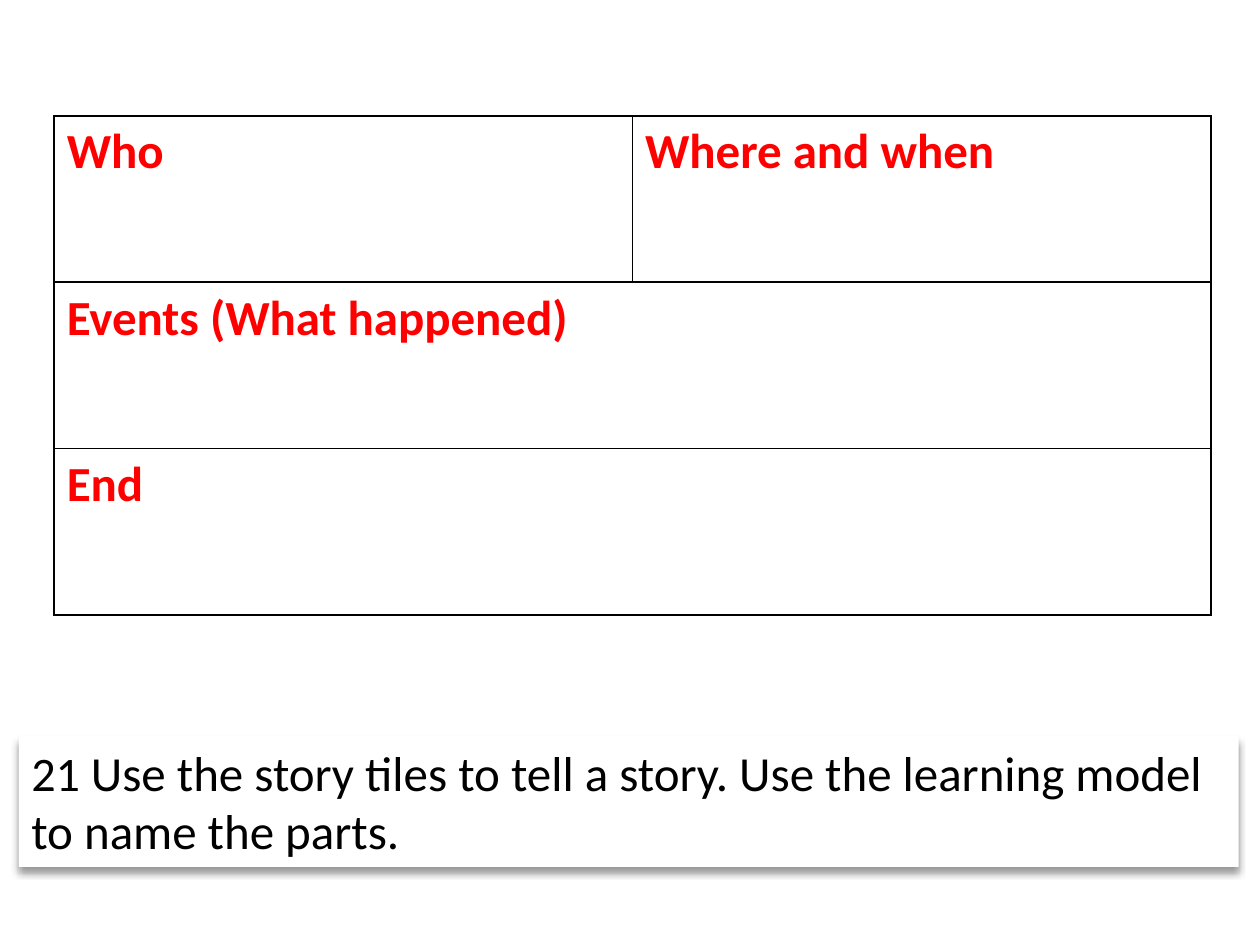
from dataclasses import dataclass
from lxml.etree import SubElement
from pptx import Presentation
from pptx.dml.color import RGBColor
from pptx.enum.shapes import MSO_SHAPE
from pptx.enum.text import MSO_ANCHOR, MSO_AUTO_SIZE, PP_ALIGN
from pptx.oxml import parse_xml
from pptx.oxml.ns import nsdecls, qn
from pptx.util import Inches, Pt


@dataclass(frozen=True)
class Theme:
    font: str = "Calibri"
    black: RGBColor = RGBColor(0, 0, 0)
    red: RGBColor = RGBColor(255, 0, 0)
    white: RGBColor = RGBColor(255, 255, 255)
    number: float = 27.5
    body: float = 28
    border: float = 1


theme = Theme()


def add_text(p, text, size=theme.body, color=theme.black, bold=False):
    p.alignment = PP_ALIGN.LEFT
    r = p.add_run()
    r.text = text
    r.font.name = theme.font
    r.font.size = Pt(size)
    r.font.bold = bold
    r.font.color.rgb = color


def add_borders(cell):
    tcPr = cell._tc.get_or_add_tcPr()
    for i, side in enumerate(("lnL", "lnR", "lnT", "lnB")):
        ln = parse_xml(f'<a:{side} {nsdecls("a")} w="{Pt(theme.border)}"/>')
        fill = SubElement(ln, qn("a:solidFill"))
        SubElement(fill, qn("a:srgbClr"), val=str(theme.black))
        tcPr.insert(i, ln)


prs = Presentation()
prs.slide_width, prs.slide_height = Inches(10), Inches(7.5)
s = prs.slides.add_slide(prs.slide_layouts[6])

sp = s.shapes.add_shape(
    MSO_SHAPE.RECTANGLE, Inches(0.15), Inches(5.84), Inches(9.68), Inches(1.04)
)
sp.fill.solid()
sp.fill.fore_color.rgb = theme.white
sp.line.fill.background()
sp.shadow.inherit = False
effects = sp._element.spPr.find(qn("a:effectLst"))
shadow = SubElement(
    effects, qn("a:outerShdw"), blurRad=str(Pt(4)), dist=str(Pt(3)),
    dir=str(90 * 60000), rotWithShape="0",
)
tint = SubElement(shadow, qn("a:srgbClr"), val=str(theme.black))
SubElement(tint, qn("a:alpha"), val="40000")
tf = sp.text_frame
tf.word_wrap = True
tf.auto_size = MSO_AUTO_SIZE.SHAPE_TO_FIT_TEXT
tf.vertical_anchor = MSO_ANCHOR.TOP
p = tf.paragraphs[0]
add_text(p, "21 ", size=theme.number)
add_text(p, "Use the story tiles to tell a story. Use the learning model to name the parts.")

rows = [("Who", "Where and when"), ("Events (What happened)",), ("End",)]
cols = 2
col_w, row_h = Inches(4.59), Inches(1.32)
table = s.shapes.add_table(
    len(rows), cols, Inches(0.43), Inches(0.92), cols * col_w, len(rows) * row_h
).table
table.first_row = table.horz_banding = False

for i, labels in enumerate(rows):
    for j in range(cols):
        cell = table.cell(i, j)
        cell.fill.solid()
        cell.fill.fore_color.rgb = theme.white
        add_borders(cell)
    for j, label in enumerate(labels):
        p = table.cell(i, j).text_frame.paragraphs[0]
        add_text(p, label, color=theme.red, bold=True)
    if len(labels) == 1:
        table.cell(i, 0).merge(table.cell(i, cols - 1))

prs.save("out.pptx")
